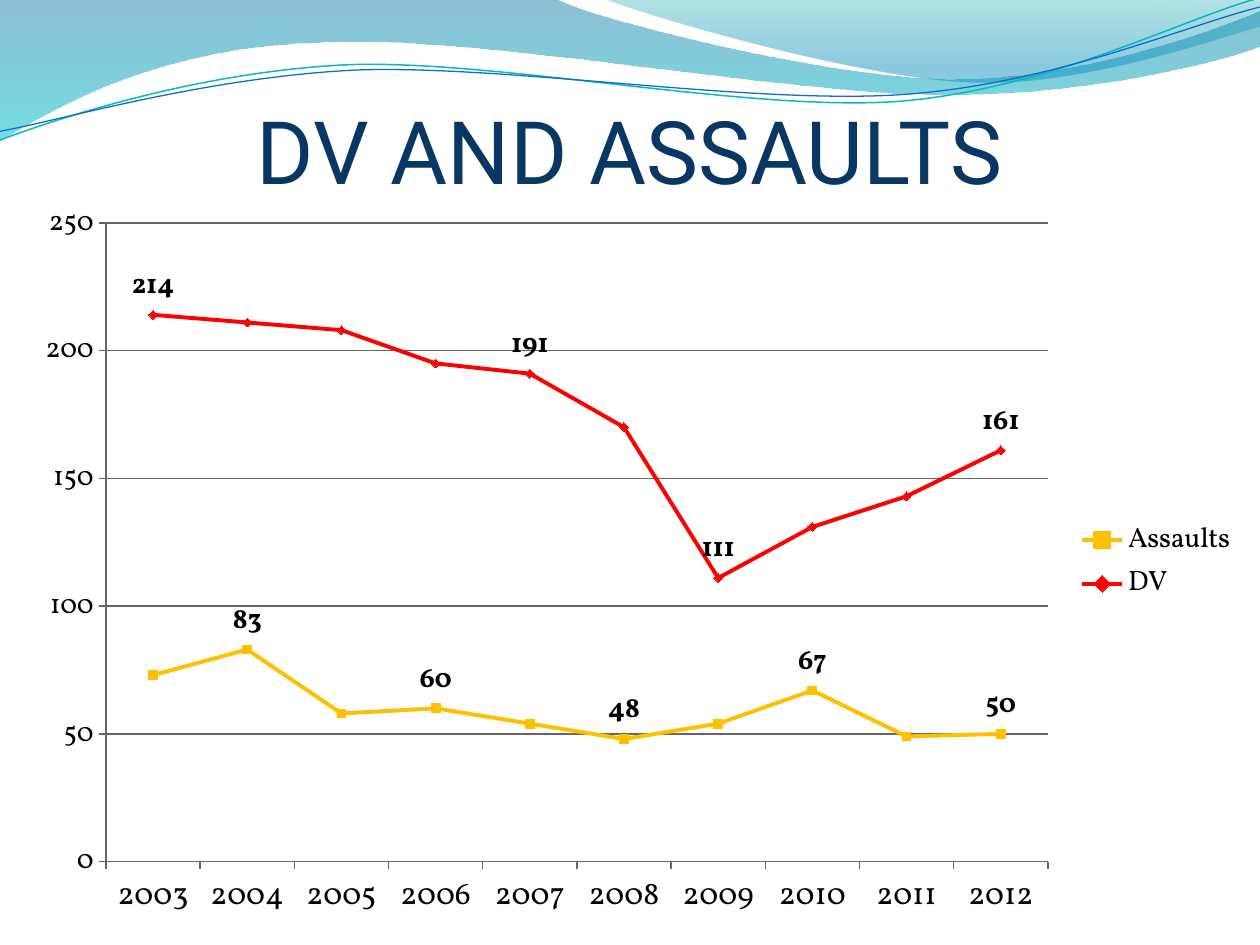
"""Build a slide with a wave banner and a line chart of DV and assaults."""
from lxml.etree import SubElement
from pptx import Presentation
from pptx.chart.data import CategoryChartData
from pptx.dml.color import RGBColor
from pptx.enum.chart import (XL_CHART_TYPE, XL_LABEL_POSITION, XL_LEGEND_POSITION,
                             XL_TICK_MARK)
from pptx.enum.text import MSO_ANCHOR, PP_ALIGN
from pptx.oxml import parse_xml
from pptx.oxml.ns import nsdecls, qn
from pptx.util import Pt

TITLE = "DV AND ASSAULTS"
YEARS = [str(year) for year in range(2003, 2013)]
SERIES = [
    ("Assaults", [73, 83, 58, 60, 54, 48, 54, 67, 49, 50], [0, 2, 4, 6, 8], "gold"),
    ("DV", [214, 211, 208, 195, 191, 170, 111, 131, 143, 161],
     [1, 2, 3, 5, 7, 8], "red"),
]
COLORS = {
    "navy": "083763", "gold": "FFC000", "red": "FF0000", "black": "000000",
    "grid": "666666", "ocean": "0074A1", "cyan": "00C6CF", "teal": "00A1A9",
    "sky": "008BBF", "aqua": "0AB8BF", "blue": "0F6FC6",
}
BANDS = [
    ([(0, 0), (317, -1), (343, 12, 478, 45, 546, 45), (614, 45, 690, 19, 720, 6),
      (721, 26), (708, 32, 626, 55, 537, 54), (448, 54, 275, 20, 185, 24),
      (93, 26, 33, 60, -1, 81)],
     [(0, "ocean", 45), (1, "cyan", 55)]),
    ([(345, -1), (366, 8, 491, 45, 554, 47), (616, 50, 692, 23, 720, 15), (720, 0)],
     [(0, "teal", 30), (0.8, "sky", 45)]),
]
CURVES = [
    ([(0, 80), (35, 67, 114, 41, 199, 37), (284, 34, 427, 64, 513, 58),
      (600, 51, 675, 11, 719, -1)], "aqua", 0.85),
    ([(0, 75), (34, 69, 118, 44, 204, 40), (290, 37, 430, 60, 516, 54),
      (602, 48, 676, 15, 720, 4)], "blue", 0.75),
]
CHART = (12.2, 108, 702, 426.2)
PLOT = (60.6, 127.4, 538.3, 365.1)


def tint(name):
    return RGBColor.from_string(COLORS[name])


def outline(slide, steps, close):
    ends = [(Pt(step[-2]), Pt(step[-1])) for step in steps]
    maker = slide.shapes.build_freeform(*ends[0])
    maker.add_line_segments(ends[1:], close=close)
    shape = maker.convert_to_shape()
    shape.shadow.inherit = False
    legs = list(shape._element.iter(qn("a:lnTo")))
    for leg, step in zip(legs, steps[1:]):
        if len(step) == 6:
            bend = parse_xml(f'<a:cubicBezTo {nsdecls("a")}/>')
            for x, y in zip(step[::2], step[1::2]):
                SubElement(bend, qn("a:pt"), x=str(Pt(x) - shape.left),
                           y=str(Pt(y) - shape.top))
            leg.getparent().replace(leg, bend)
    return shape


def add_waves(slide):
    for steps, stops in BANDS:
        band = outline(slide, steps, True)
        band.line.fill.background()
        band.fill.gradient()
        band.fill.gradient_angle = 270
        for stop, (place, name, alpha) in zip(band.fill.gradient_stops, stops):
            stop.position = place
            stop.color.rgb = tint(name)
        tones = band._element.spPr.iter(qn("a:srgbClr"))
        for tone, (place, name, alpha) in zip(tones, stops):
            SubElement(tone, qn("a:alpha"), val=str(alpha * 1000))
    for steps, name, width in CURVES:
        curve = outline(slide, steps, False)
        curve.fill.background()
        curve.line.color.rgb = tint(name)
        curve.line.width = Pt(width)


def add_title(slide):
    frame = slide.shapes.add_textbox(Pt(36), Pt(48), Pt(648), Pt(67.5)).text_frame
    frame.word_wrap = True
    frame.vertical_anchor = MSO_ANCHOR.BOTTOM
    frame.margin_left = frame.margin_right = frame.margin_bottom = 0
    frame.text = TITLE
    para = frame.paragraphs[0]
    para.alignment = PP_ALIGN.CENTER
    font = para.runs[0].font
    font.name, font.size, font.color.rgb = "Roboto", Pt(50), tint("navy")


def style_axis(axis, size):
    axis.major_tick_mark = XL_TICK_MARK.OUTSIDE
    axis.minor_tick_mark = XL_TICK_MARK.NONE
    axis.tick_labels.font.size = Pt(size)
    axis.format.line.color.rgb = tint("grid")


def style_series(series, hidden, name):
    series.smooth = False
    series.format.line.color.rgb = tint(name)
    series.marker.size = 5
    for part in (series.marker.format.fill, series.marker.format.line.fill):
        part.solid()
        part.fore_color.rgb = tint(name)
    labels = series.data_labels
    labels.show_value = True
    labels.position = XL_LABEL_POSITION.ABOVE
    labels.font.size, labels.font.bold = Pt(16), True
    for order, i in enumerate(hidden):
        labels._element.insert(order, parse_xml(
            f'<c:dLbl {nsdecls("c")}><c:idx val="{i}"/><c:delete val="1"/></c:dLbl>'))


def place_plot(chart):
    left, top, width, height = CHART
    x, y, w, h = PLOT
    parts = {"x": (x - left) / width, "y": (y - top) / height,
             "w": w / width, "h": h / height}
    rules = '<c:layoutTarget val="inner"/><c:xMode val="edge"/><c:yMode val="edge"/>'
    rules += "".join(f'<c:{key} val="{part:.4f}"/>' for key, part in parts.items())
    area = chart._chartSpace.chart.plotArea
    for old in area.findall(qn("c:layout")):
        area.remove(old)
    area.insert(0, parse_xml(f'<c:layout {nsdecls("c")}><c:manualLayout>{rules}'
                             '</c:manualLayout></c:layout>'))


def add_chart(slide):
    data = CategoryChartData()
    data.categories = YEARS
    for name, values, *look in SERIES:
        data.add_series(name, values)
    chart = slide.shapes.add_chart(XL_CHART_TYPE.LINE_MARKERS,
                                   *map(Pt, CHART), data).chart
    chart.has_title = False
    chart.font.name, chart.font.size = "Vollkorn", Pt(10)
    chart.font.color.rgb = tint("black")
    chart.has_legend = True
    chart.legend.position = XL_LEGEND_POSITION.RIGHT
    chart.legend.include_in_layout = False
    chart.legend.font.size = Pt(16)
    style_axis(chart.category_axis, 18)
    style_axis(chart.value_axis, 16)
    chart.value_axis.major_gridlines.format.line.color.rgb = tint("grid")
    plot = chart.plots[0]
    plot.vary_by_categories = False
    for series, (name, values, *look) in zip(plot.series, SERIES):
        style_series(series, *look)
    place_plot(chart)


def main():
    deck = Presentation()
    deck.slide_width, deck.slide_height = Pt(720), Pt(540)
    slide = deck.slides.add_slide(deck.slide_layouts[6])
    add_waves(slide)
    add_title(slide)
    add_chart(slide)
    deck.save("out.pptx")


if __name__ == "__main__":
    main()
